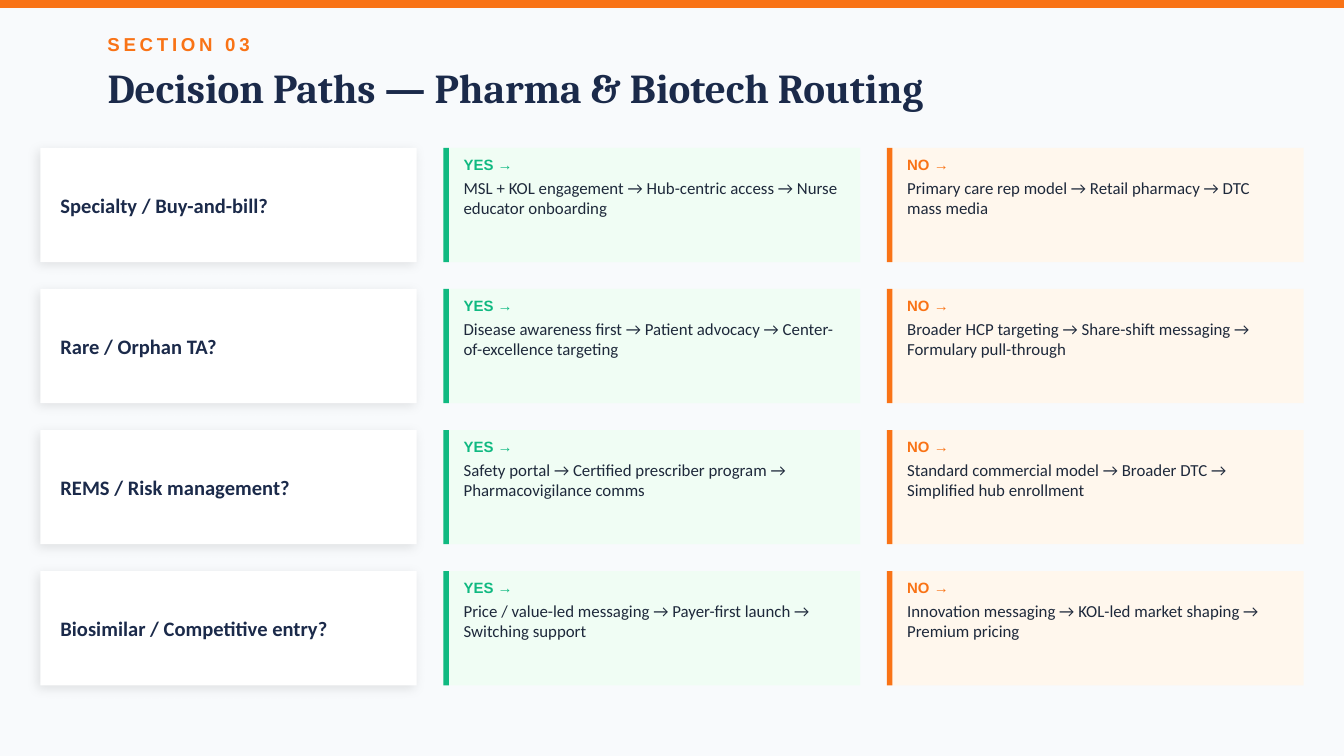
from lxml.etree import SubElement
from pptx import Presentation
from pptx.dml.color import RGBColor
from pptx.enum.shapes import MSO_SHAPE as Shape
from pptx.enum.text import MSO_ANCHOR as Anchor, MSO_AUTO_SIZE as AutoSize, PP_ALIGN as Align
from pptx.oxml.ns import qn
from pptx.util import Inches, Pt

COLORS = {
    "background": "F8FAFC", "orange": "F97316", "navy": "1B2A4A", "white": "FFFFFF",
    "green": "10B981", "mint": "F0FDF4", "cream": "FFF7ED", "body": "1E293B", "black": "000000",
}

DECISIONS = [
    ("Specialty / Buy-and-bill?",
     "MSL + KOL engagement → Hub-centric access → Nurse educator onboarding",
     "Primary care rep model → Retail pharmacy → DTC mass media"),
    ("Rare / Orphan TA?",
     "Disease awareness first → Patient advocacy → Center-of-excellence targeting",
     "Broader HCP targeting → Share-shift messaging → Formulary pull-through"),
    ("REMS / Risk management?",
     "Safety portal → Certified prescriber program → Pharmacovigilance comms",
     "Standard commercial model → Broader DTC → Simplified hub enrollment"),
    ("Biosimilar / Competitive entry?",
     "Price / value-led messaging → Payer-first launch → Switching support",
     "Innovation messaging → KOL-led market shaping → Premium pricing"),
]


def color(name):
    """Return the named colour."""
    return RGBColor.from_string(COLORS[name])


def write(box, text, font="Calibri", size=9, fill="body", bold=False, anchor=Anchor.MIDDLE, spacing=None):
    """Put one formatted line of text into a box without margins."""
    frame = box.text_frame
    frame.word_wrap = True
    frame.auto_size = AutoSize.NONE
    frame.vertical_anchor = anchor
    frame.margin_left = frame.margin_right = frame.margin_top = frame.margin_bottom = 0
    para = frame.paragraphs[0]
    para.alignment = Align.LEFT
    span = para.add_run()
    span.text = text
    span.font.name, span.font.size, span.font.bold = font, Pt(size), bold
    span.font.color.rgb = color(fill)
    if spacing:
        span.font._element.set("spc", str(spacing * 100))


def add_text(page, left, top, width, height, text, **style):
    """Add a text box at a place given in inches."""
    box = page.shapes.add_textbox(Inches(left), Inches(top), Inches(width), Inches(height))
    write(box, text, **style)


def add_panel(page, left, top, width, height, fill):
    """Add a plain filled rectangle."""
    panel = page.shapes.add_shape(Shape.RECTANGLE, Inches(left), Inches(top), Inches(width), Inches(height))
    panel.shadow.inherit = False
    panel.fill.solid()
    panel.fill.fore_color.rgb = color(fill)
    panel.line.fill.background()
    return panel


def add_soft_shadow(panel):
    """Give a panel a faint shadow towards the lower left."""
    effects = panel._element.spPr.find(qn("a:effectLst"))
    shadow = SubElement(effects, qn("a:outerShdw"), blurRad=str(Pt(6)), dist=str(Pt(2)),
                        dir=str(135 * 60000), algn="bl", rotWithShape="0")
    tint = SubElement(shadow, qn("a:srgbClr"), val=COLORS["black"])
    SubElement(tint, qn("a:alpha"), val="10000")


def add_header(page, left, top, width):
    """Place the top bar, the section label and the title."""
    add_panel(page, 0, 0, 10, 0.06, "orange")
    add_text(page, left, top, 3, 0.25, "SECTION 03", font="Arial", size=10, fill="orange", bold=True, spacing=2)
    title = page.shapes.title
    title.left, title.top = Inches(left), Inches(top + 0.22)
    title.width, title.height = Inches(width), Inches(0.45)
    write(title, "Decision Paths — Pharma & Biotech Routing", font="Cambria", size=22, fill="navy", bold=True)


def add_question(page, left, top, width, height, question):
    """Place a question card."""
    add_soft_shadow(add_panel(page, left, top, width, height, "white"))
    add_text(page, left + 0.15, top, width - 0.3, height, question, size=11, fill="navy", bold=True)


def add_answer(page, left, top, width, height, label, route, accent, fill):
    """Place an answer card with an accent edge, a label and a route."""
    add_panel(page, left, top, width, height, fill)
    add_panel(page, left, top, 0.04, height, accent)
    add_text(page, left + 0.15, top, 0.6, 0.25, label, font="Arial", size=8, fill=accent, bold=True)
    add_text(page, left + 0.15, top + 0.22, width - 0.3, height - 0.25, route, anchor=Anchor.TOP)


def add_decisions(page, left, top, height, gap):
    """Stack one row for each decision: question, yes route and no route."""
    question_width, answer_width = 2.8, 3.1
    yes_left = left + question_width + gap
    no_left = yes_left + answer_width + gap
    for index, (question, yes_route, no_route) in enumerate(DECISIONS):
        row_top = top + index * (height + gap)
        add_question(page, left, row_top, question_width, height, question)
        add_answer(page, yes_left, row_top, answer_width, height, "YES →", yes_route, "green", "mint")
        add_answer(page, no_left, row_top, answer_width, height, "NO →", no_route, "orange", "cream")


def main():
    """Build and save the deck."""
    deck = Presentation()
    deck.slide_width = Inches(10)
    deck.slide_height = deck.slide_width * 9 // 16
    page = deck.slides.add_slide(deck.slide_layouts[5])
    page.background.fill.solid()
    page.background.fill.fore_color.rgb = color("background")
    add_header(page, 0.8, 0.2, 8)
    add_decisions(page, 0.3, 1.1, 0.85, 0.2)
    deck.save("out.pptx")


if __name__ == "__main__":
    main()
